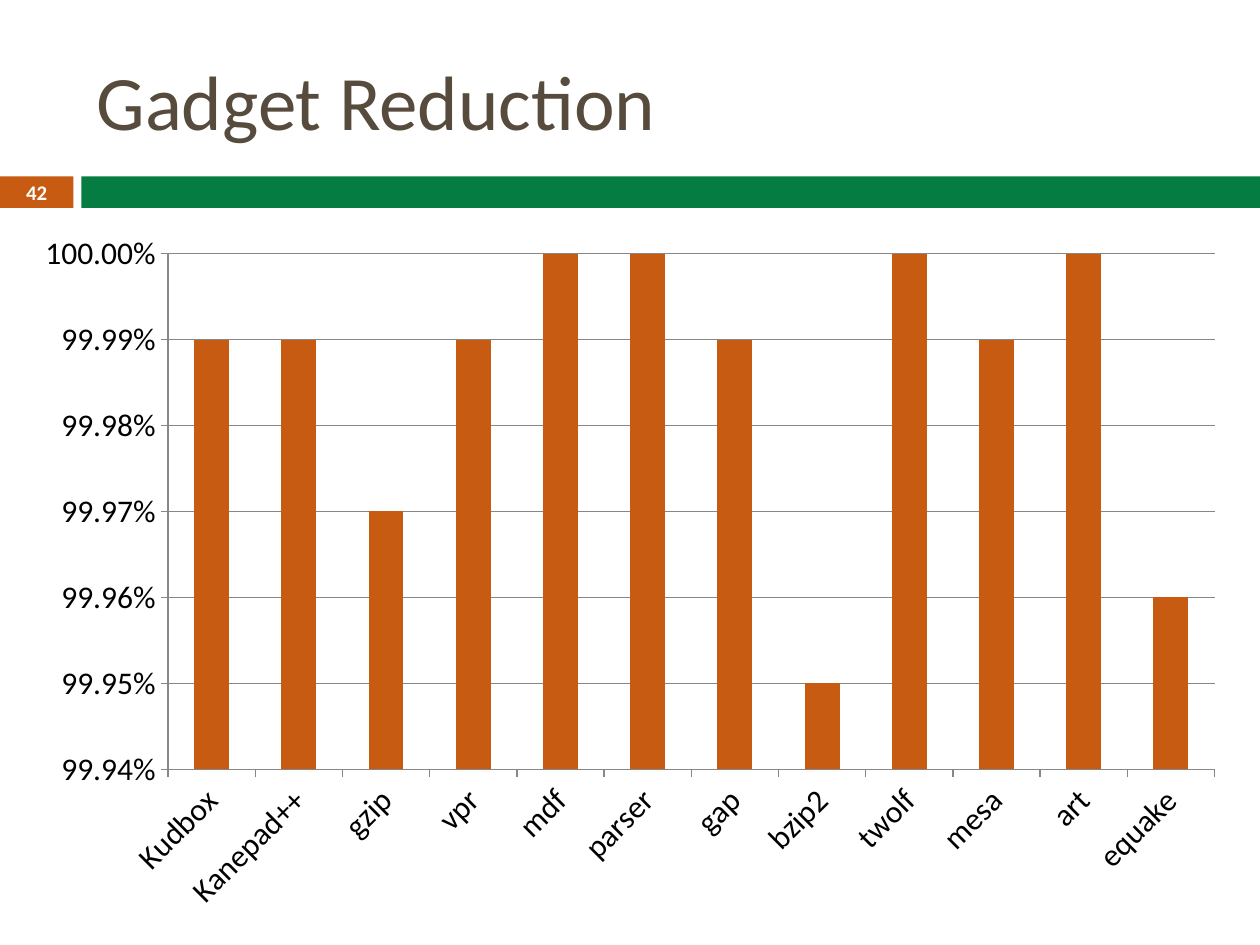
from pptx import Presentation
from pptx.chart.data import CategoryChartData
from pptx.dml.color import RGBColor
from pptx.enum.chart import XL_CHART_TYPE, XL_TICK_MARK
from pptx.enum.shapes import MSO_SHAPE
from pptx.enum.text import MSO_ANCHOR, PP_ALIGN
from pptx.util import Pt

COLUMN = XL_CHART_TYPE.COLUMN_CLUSTERED
OUTSIDE, NO_TICK = XL_TICK_MARK.OUTSIDE, XL_TICK_MARK.NONE
RECT = MSO_SHAPE.RECTANGLE
MIDDLE = MSO_ANCHOR.MIDDLE
LEFT, CENTER = PP_ALIGN.LEFT, PP_ALIGN.CENTER

FONT = "Calibri"
COLORS = {
    "orange": "C75B12",
    "green": "057C42",
    "brown": "564B3C",
    "white": "FFFFFF",
    "black": "000000",
    "gray": "878787",
}
RATES = {
    "Kudbox": 0.9999,
    "Kanepad++": 0.9999,
    "gzip": 0.9997,
    "vpr": 0.9999,
    "mdf": 1,
    "parser": 1,
    "gap": 0.9999,
    "bzip2": 0.9995,
    "twolf": 1,
    "mesa": 0.9999,
    "art": 1,
    "equake": 0.9996,
}


def color(name):
    return RGBColor.from_string(COLORS[name])


def style_font(font, size, name, bold=False):
    font.name = FONT
    font.size = Pt(size)
    font.bold = bold
    font.color.rgb = color(name)


def set_text(shape, text, size, name, align, bold=False):
    frame = shape.text_frame
    frame.text = text
    frame.word_wrap = True
    frame.vertical_anchor = MIDDLE
    para = frame.paragraphs[0]
    para.alignment = align
    style_font(para.runs[0].font, size, name, bold)


def add_bar(slide, left, top, width, height, name):
    bar = slide.shapes.add_shape(RECT, Pt(left), Pt(top), Pt(width), Pt(height))
    bar.shadow.inherit = False
    bar.fill.solid()
    bar.fill.fore_color.rgb = color(name)
    bar.line.fill.background()


def set_title(slide, text):
    title = slide.shapes.title
    title.left, title.top = Pt(48), Pt(18)
    title.width, title.height = Pt(642), Pt(78)
    set_text(title, text, 44, "brown", LEFT)


def add_number(slide, text):
    box = slide.shapes.add_textbox(Pt(0), Pt(100.2), Pt(42), Pt(19.2))
    frame = box.text_frame
    frame.margin_top = frame.margin_bottom = Pt(0)
    set_text(box, text, 11.9, "white", CENTER, bold=True)


def style_line(line):
    line.color.rgb = color("gray")
    line.width = Pt(0.75)


def style_axis(axis):
    axis.major_tick_mark = OUTSIDE
    axis.minor_tick_mark = NO_TICK
    style_line(axis.format.line)


def add_rates(slide):
    data = CategoryChartData(number_format="0.00%")
    data.categories = list(RATES)
    data.add_series("Series 1", list(RATES.values()))
    chart = slide.shapes.add_chart(
        COLUMN, Pt(12), Pt(126), Pt(696), Pt(402), data
    ).chart
    chart.has_title = False
    chart.has_legend = False
    style_font(chart.font, 18, "black")

    plot = chart.plots[0]
    plot.gap_width = 150
    plot.vary_by_categories = False
    fill = plot.series[0].format.fill
    fill.solid()
    fill.fore_color.rgb = color("orange")

    style_axis(chart.category_axis)
    axis = chart.value_axis
    style_axis(axis)
    axis.minimum_scale, axis.maximum_scale = 0.9994, 1
    axis.major_unit = 0.0001
    axis.has_major_gridlines = True
    style_line(axis.major_gridlines.format.line)
    axis.tick_labels.number_format = "0.00%"
    axis.tick_labels.number_format_is_linked = False


def main():
    deck = Presentation()
    deck.slide_width, deck.slide_height = Pt(720), Pt(540)
    slide = deck.slides.add_slide(deck.slide_layouts[5])
    add_bar(slide, 0, 100.8, 42, 18, "orange")
    add_bar(slide, 46.5, 100.8, 673.5, 18, "green")
    set_title(slide, "Gadget Reduction")
    add_rates(slide)
    add_number(slide, "42")
    deck.save("out.pptx")


if __name__ == "__main__":
    main()
